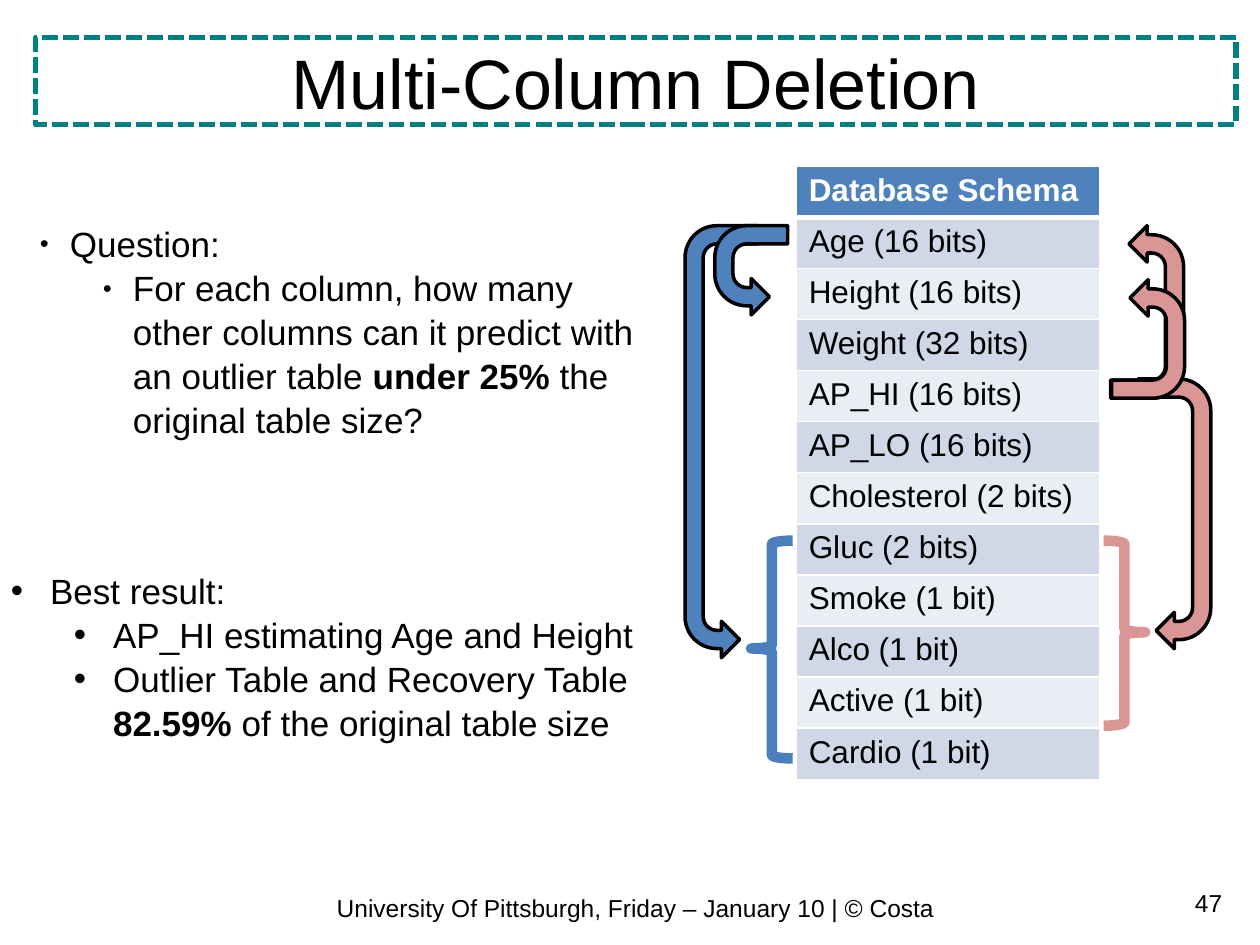
import pptx
import pptx.util
import pptx.dml.color
import pptx.enum.dml
import pptx.enum.shapes
import pptx.enum.text
import pptx.oxml.ns
from lxml import etree

Cm = pptx.util.Cm
Pt = pptx.util.Pt
RGBColor = pptx.dml.color.RGBColor
Shape = pptx.enum.shapes.MSO_SHAPE
Align = pptx.enum.text.PP_ALIGN
qn = pptx.oxml.ns.qn

BLACK = RGBColor(0x00, 0x00, 0x00)
WHITE = RGBColor(0xFF, 0xFF, 0xFF)
TEAL = RGBColor(0x00, 0x80, 0x80)
BLUE = RGBColor(0x4F, 0x81, 0xBD)
BRACE_BLUE = RGBColor(0x4B, 0x7E, 0xBC)
PINK = RGBColor(0xD9, 0x96, 0x94)
BAND_DARK = RGBColor(0xD0, 0xD8, 0xE8)
BAND_LIGHT = RGBColor(0xE9, 0xED, 0xF4)

ARROW_WIDTH = 1.47
ROW_HEIGHT = 1.03

SCHEMA = [
    "Database Schema", "Age (16 bits)", "Height (16 bits)", "Weight (32 bits)",
    "AP_HI (16 bits)", "AP_LO (16 bits)", "Cholesterol (2 bits)", "Gluc (2 bits)",
    "Smoke (1 bit)", "Alco (1 bit)", "Active (1 bit)", "Cardio (1 bit)",
]

# (text runs, left margin, hanging indent, bullet, bullet percent, space before)
POINTS = [
    (["Question:"], 1.19, 0.61, "●", 45, 0),
    (["For each column, how many other columns can it predict with an outlier table ",
      "under 25%", " the original table size?"], 2.46, 0.61, "●", 45, 0),
    (["Best result:"], 0.79, 0.79, "•", 100, 72),
    (["AP_HI estimating Age and Height"], 2.06, 0.79, "•", 100, 0),
    (["Outlier Table and Recovery Table ", "82.59%", " of the original table size"],
     2.06, 0.79, "•", 100, 0),
]


def set_font(paragraph, size, color=BLACK, bold=False):
    paragraph.font.name = "Arial"
    paragraph.font.size = Pt(size)
    paragraph.font.bold = bold
    paragraph.font.color.rgb = color


def add_label(slide, box, text, size, align):
    label = slide.shapes.add_textbox(*map(Cm, box))
    label.text_frame.word_wrap = True
    paragraph = label.text_frame.paragraphs[0]
    paragraph.text = text
    paragraph.alignment = align
    set_font(paragraph, size)


def add_title(slide, text):
    title = slide.shapes.add_shape(
        Shape.RECTANGLE, Cm(0.71), Cm(0.76), Cm(24.21), Cm(1.75))
    title.shadow.inherit = False
    title.fill.background()
    title.line.color.rgb = TEAL
    title.line.width = Pt(3)
    title.line.dash_style = pptx.enum.dml.MSO_LINE.SQUARE_DOT
    title.text_frame.word_wrap = True
    title.text_frame.vertical_anchor = pptx.enum.text.MSO_ANCHOR.MIDDLE
    paragraph = title.text_frame.paragraphs[0]
    paragraph.text = text
    paragraph.alignment = Align.CENTER
    set_font(paragraph, 40)


def add_bullet(paragraph, margin, hanging, bullet, percent):
    properties = paragraph._p.get_or_add_pPr()
    properties.set("marL", str(Cm(margin)))
    properties.set("indent", str(-Cm(hanging)))
    size = etree.SubElement(properties, qn("a:buSzPct"))
    size.set("val", str(percent * 1000))
    etree.SubElement(properties, qn("a:buFont")).set("typeface", "Arial")
    etree.SubElement(properties, qn("a:buChar")).set("char", bullet)


def add_points(slide):
    frame = slide.shapes.add_textbox(
        Cm(-0.03), Cm(4.32), Cm(13.56), Cm(10.52)).text_frame
    frame.word_wrap = True
    for index, (parts, margin, hanging, bullet, percent, gap) in enumerate(POINTS):
        paragraph = frame.add_paragraph() if index else frame.paragraphs[0]
        add_bullet(paragraph, margin, hanging, bullet, percent)
        paragraph.line_spacing = 1.05
        if gap:
            paragraph.space_before = Pt(gap)
        set_font(paragraph, 20)
        for position, part in enumerate(parts):
            run = paragraph.add_run()
            run.text = part
            if position == 1:
                run.font.bold = True


def add_border(cell, widths):
    properties = cell._tc.get_or_add_tcPr()
    for position, (side, width) in enumerate(zip("LRTB", widths)):
        border = etree.Element(qn(f"a:ln{side}"), w=str(Pt(width)))
        fill = etree.SubElement(border, qn("a:solidFill"))
        etree.SubElement(fill, qn("a:srgbClr")).set("val", str(WHITE))
        properties.insert(position, border)


def add_schema(slide):
    schema = slide.shapes.add_table(
        len(SCHEMA), 1, Cm(16.05), Cm(3.35), Cm(6.12),
        Cm(ROW_HEIGHT * len(SCHEMA))).table
    schema.horz_banding = False
    for index, column_name in enumerate(SCHEMA):
        schema.rows[index].height = Cm(ROW_HEIGHT)
        header = index == 0
        cell = schema.cell(index, 0)
        cell.text = column_name
        cell.fill.solid()
        band = BAND_DARK if index % 2 else BAND_LIGHT
        cell.fill.fore_color.rgb = BLUE if header else band
        add_border(cell, (1, 1, 3 if index == 1 else 1, 3 if header else 1))
        set_font(cell.text_frame.paragraphs[0], 18,
                 WHITE if header else BLACK, header)


def flip(shape, *directions):
    for direction in directions:
        shape._element.spPr.find(qn("a:xfrm")).set(direction, "1")


def add_prediction(slide, left, top, span, color, *directions):
    shift = (span - ARROW_WIDTH) / 2
    arrow = slide.shapes.add_shape(
        Shape.U_TURN_ARROW, Cm(left - shift), Cm(top + shift),
        Cm(span), Cm(ARROW_WIDTH))
    arrow.rotation = 270
    flip(arrow, *directions)
    arrow.shadow.inherit = False
    arrow.fill.solid()
    arrow.fill.fore_color.rgb = color
    arrow.line.color.rgb = BLACK
    arrow.line.width = Pt(2)


def add_brace(slide, left, height, color, *directions):
    brace = slide.shapes.add_shape(
        Shape.LEFT_BRACE, Cm(left), Cm(10.9), Cm(0.84), Cm(height))
    brace.adjustments[1] = 0.495
    flip(brace, *directions)
    brace.shadow.inherit = False
    brace.fill.background()
    brace.line.color.rgb = color
    brace.line.width = Pt(6)


def main():
    presentation = pptx.Presentation()
    presentation.slide_width = Cm(25.4)
    presentation.slide_height = Cm(19.05)
    slide = presentation.slides.add_slide(presentation.slide_layouts[6])

    add_label(slide, (0.71, 17.88, 24.21, 0.86),
              "University Of Pittsburgh, Friday – January 10 | © Costa",
              14, Align.CENTER)
    add_title(slide, "Multi-Column Deletion")
    add_schema(slide)
    add_points(slide)

    add_brace(slide, 15.14, 4.39, BRACE_BLUE)
    add_prediction(slide, 13.81, 4.55, 8.71, BLUE, "flipH")
    add_prediction(slide, 14.41, 4.55, 1.8, BLUE, "flipH")

    add_brace(slide, 22.25, 3.73, PINK, "flipH")
    add_prediction(slide, 22.94, 7.64, 5.44, PINK, "flipH", "flipV")
    add_prediction(slide, 22.39, 4.55, 3.48, PINK, "flipV")
    add_prediction(slide, 22.41, 5.64, 2.39, PINK, "flipV")

    add_label(slide, (21.89, 17.78, 3, 1.02), "47", 14, Align.RIGHT)
    presentation.save("out.pptx")


if __name__ == "__main__":
    main()
